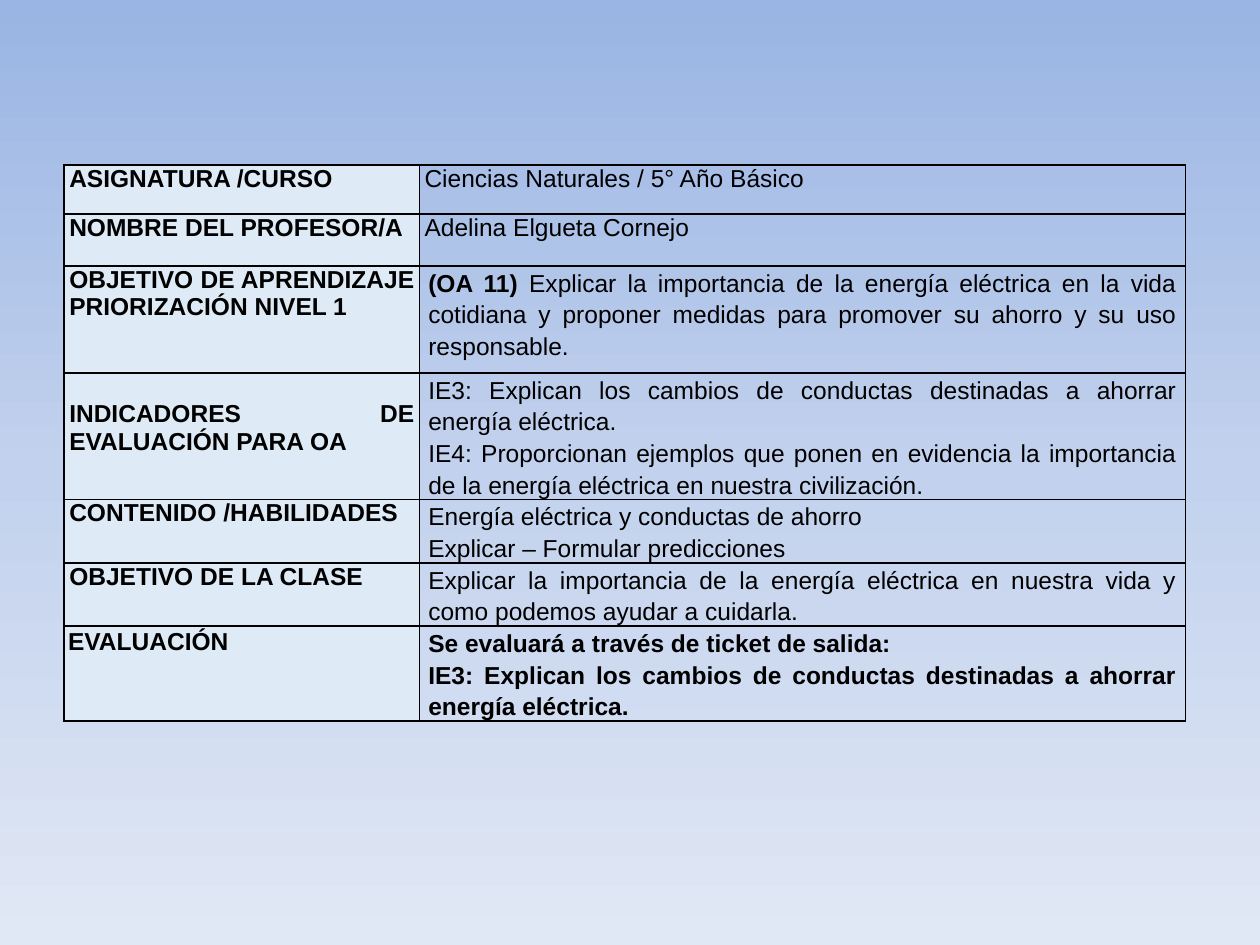
from copy import deepcopy

from lxml import etree
from pptx import Presentation
from pptx.dml.color import RGBColor
from pptx.enum.text import PP_ALIGN
from pptx.oxml.ns import qn
from pptx.util import Inches, Pt

JUSTIFY = PP_ALIGN.JUSTIFY
COLORS = {
    "sky_top": "9AB5E4",
    "sky_middle": "C2D1ED",
    "sky_bottom": "E1E8F5",
    "label": "DEEAF6",
    "ink": "000000",
}


def add_text(paragraph, text, bold=False, size=14, font="Arial", color="ink"):
    run = paragraph.add_run()
    run.text = text
    run.font.name = font
    run.font.size = Pt(size)
    run.font.bold = bold
    run.font.color.rgb = RGBColor.from_string(COLORS[color])


class LessonSlide:
    border_width = Pt(1)

    def __init__(self, presentation):
        self.slide = presentation.slides.add_slide(presentation.slide_layouts[6])

    def gradient_background(self, *names):
        fill = self.slide.background.fill
        fill.gradient()
        fill.gradient_angle = 270
        stop_list = next(self.slide.element.iter(qn("a:gsLst")))
        stop_list.insert(1, deepcopy(stop_list[0]))
        for index, (stop, name) in enumerate(zip(fill.gradient_stops, names)):
            stop.position = index / (len(names) - 1)
            stop.color.rgb = RGBColor.from_string(COLORS[name])

    def border(self, cell):
        properties = cell._tc.get_or_add_tcPr()
        for index, side in enumerate(("lnL", "lnR", "lnT", "lnB")):
            line = etree.Element(qn(f"a:{side}"), w=str(self.border_width))
            solid = etree.SubElement(line, qn("a:solidFill"))
            etree.SubElement(solid, qn("a:srgbClr"), val=COLORS["ink"])
            properties.insert(index, line)

    def cell(self, cell, paragraphs, side=0.04, top=0, bottom=0, spacing=None, fill=None):
        """Each paragraph is a list of (text, bold) runs."""
        cell.margin_left = cell.margin_right = Inches(side)
        cell.margin_top, cell.margin_bottom = Inches(top), Inches(bottom)
        if fill:
            cell.fill.solid()
            cell.fill.fore_color.rgb = RGBColor.from_string(COLORS[fill])
        else:
            cell.fill.background()
        self.border(cell)
        frame = cell.text_frame
        for index, runs in enumerate(paragraphs):
            paragraph = frame.add_paragraph() if index else frame.paragraphs[0]
            paragraph.alignment = JUSTIFY
            if spacing:
                paragraph.line_spacing = spacing
            for text, bold in runs:
                add_text(paragraph, text, bold=bold)

    def table(self, left, top, width, height, column_widths, rows):
        frame = self.slide.shapes.add_table(
            len(rows), len(column_widths),
            Inches(left), Inches(top), Inches(width), Inches(height))
        table = frame.table
        table.first_row = table.horz_banding = False
        for column, column_width in zip(table.columns, column_widths):
            column.width = Inches(column_width)
        for index, (row_height, label, label_format, details, detail_format) in enumerate(rows):
            table.rows[index].height = Inches(row_height)
            self.cell(table.cell(index, 0), [[(label, True)]], fill="label", **label_format)
            self.cell(table.cell(index, 1), details, **detail_format)
        frame.height = Inches(height)


PLAIN = {}
WIDE = {"side": 0.07, "spacing": 1.15}
INDICATOR_3 = "IE3: Explican los cambios de conductas destinadas a ahorrar energía eléctrica."

# Row height, label, label format, detail paragraphs, detail format
LESSON_ROWS = [
    (0.39, "ASIGNATURA /CURSO", PLAIN,
     [[("Ciencias Naturales / 5° Año Básico", False)]], PLAIN),
    (0.41, "NOMBRE DEL PROFESOR/A", PLAIN,
     [[("Adelina Elgueta Cornejo", False)]], PLAIN),
    (0.85, "OBJETIVO DE APRENDIZAJE PRIORIZACIÓN NIVEL 1", PLAIN,
     [[("(OA 11) ", True),
       ("Explicar la importancia de la energía eléctrica en la vida cotidiana y "
        "proponer medidas para promover su ahorro y su uso responsable.", False)]], WIDE),
    (0.69, "INDICADORES DE EVALUACIÓN PARA OA", {"top": 0.22},
     [[(INDICATOR_3, False)],
      [("IE4: Proporcionan ejemplos que ponen en evidencia la importancia de la "
        "energía eléctrica en nuestra civilización.", False)]], WIDE),
    (0.32, "CONTENIDO /HABILIDADES", PLAIN,
     [[("Energía eléctrica y conductas de ahorro", False)],
      [("Explicar – Formular predicciones", False)]], WIDE),
    (0.48, "OBJETIVO DE LA CLASE", PLAIN,
     [[("Explicar la importancia de la energía eléctrica en nuestra vida y como "
        "podemos ayudar a cuidarla.", False)]], WIDE),
    (0.63, "EVALUACIÓN", {"side": 0.03, "top": 0.02, "bottom": 0.02},
     [[("Se evaluará a través de ticket de salida:", True)],
      [(INDICATOR_3, True)]], WIDE),
]


def main():
    presentation = Presentation()
    presentation.slide_width, presentation.slide_height = Inches(10), Inches(7.5)
    lesson = LessonSlide(presentation)
    lesson.gradient_background("sky_top", "sky_middle", "sky_bottom")
    # Lesson plan
    lesson.table(0.51, 1.31, 8.9, 4.61, (2.82, 6.08), LESSON_ROWS)
    presentation.save("out.pptx")


if __name__ == "__main__":
    main()
